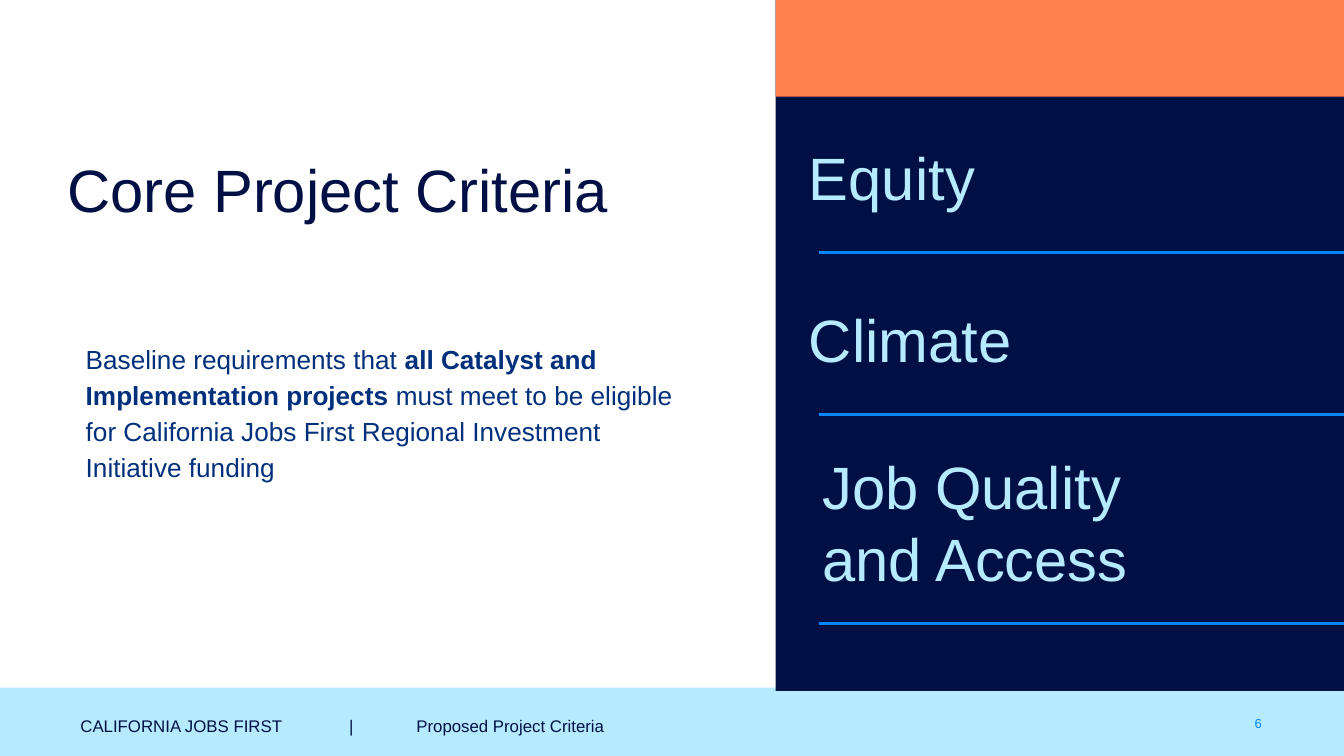
from dataclasses import dataclass

from lxml.etree import SubElement
from pptx import Presentation
from pptx.dml.color import RGBColor
from pptx.enum.shapes import MSO_CONNECTOR as Connector, MSO_SHAPE as Preset
from pptx.enum.text import MSO_ANCHOR as Anchor, MSO_AUTO_SIZE as AutoSize, PP_ALIGN as Align
from pptx.oxml.ns import qn
from pptx.util import Cm, Pt


@dataclass(frozen=True)
class Theme:
    font: str = "Arial"
    navy: str = "001044"
    body_blue: str = "002F7B"
    bright_blue: str = "0086FF"
    pale_blue: str = "B6EAFF"
    orange: str = "FC814C"
    heading: int = 32
    body: int = 14
    footer: int = 9
    number: int = 7
    rule: float = 1.5


THEME = Theme()

# Content; lengths in cm, boxes as left, top, width, height
WIDTH, HEIGHT = 25.4, 14.29
TITLE = "Core Project Criteria"
BODY = [
    ("Baseline requirements that ", False),
    ("all Catalyst and Implementation projects", True),
    (" must meet to be eligible for California Jobs First Regional Investment "
     "Initiative funding", False),
]
FOOTER = "CALIFORNIA JOBS FIRST\t|\tProposed Project Criteria"
FOOTER_TABS = (4.25, 4.69)
PAGE_NUMBER = "6"

# Criterion, top, width, height, insets (sides, ends), line spacing, rule below
CRITERIA = [
    ("Equity", 2.82, 9.5, 1.42, (0, 0), 0.9, 4.78),
    ("Climate", 5.87, 9.5, 1.12, (0, 0), 0.9, 7.83),
    ("Job Quality and Access", 8.38, 7.72, 3.0, (0.25, 0.13), 1.0, 11.79),
]
CRITERIA_LEFT, RULE_LEFT = 15.29, 15.47
PANEL_LEFT, PANEL_BOTTOM, ORANGE_HEIGHT = 14.66, 13.06, 1.83
FOOTER_TOP, FOOTER_TEXT_TOP, FOOTER_TEXT_HEIGHT = 13.0, 13.03, 1.27


def color(name):
    return RGBColor.from_string(name)


def add_block(slide, box, fill):
    shape = slide.shapes.add_shape(Preset.RECTANGLE, *map(Cm, box))
    shape.shadow.inherit = False
    shape.fill.solid()
    shape.fill.fore_color.rgb = color(fill)
    shape.line.fill.background()


def add_rule(slide, top):
    rule = slide.shapes.add_connector(
        Connector.STRAIGHT, Cm(RULE_LEFT), Cm(top), Cm(WIDTH), Cm(top))
    rule.line.color.rgb = color(THEME.bright_blue)
    rule.line.width = Pt(THEME.rule)
    SubElement(rule._element.spPr, qn("a:effectLst"))


def write(shape, box, runs, size, ink, insets=(0, 0), spacing=1.0,
          anchor=Anchor.TOP, align=Align.LEFT, tabs=(), after=0):
    """Place a text shape and fill its one paragraph with (text, bold) runs."""
    shape.left, shape.top, shape.width, shape.height = map(Cm, box)
    frame = shape.text_frame
    frame.word_wrap = True
    frame.auto_size = AutoSize.NONE
    frame.vertical_anchor = anchor
    frame.margin_left = frame.margin_right = Cm(insets[0])
    frame.margin_top = frame.margin_bottom = Cm(insets[1])

    paragraph = frame.paragraphs[0]
    paragraph.alignment = align
    paragraph.line_spacing = spacing
    paragraph.space_before = Pt(0)
    paragraph.space_after = Pt(after)
    properties = paragraph._p.get_or_add_pPr()
    properties.set("marL", "0")
    properties.set("indent", "0")
    SubElement(properties, qn("a:buNone"))
    if tabs:
        tab_list = SubElement(properties, qn("a:tabLst"))
        for position in tabs:
            SubElement(tab_list, qn("a:tab"), pos=str(int(Cm(position))), algn="l")

    for text, bold in runs:
        run = paragraph.add_run()
        run.text = text
        run.font.name = THEME.font
        run.font.size = Pt(size)
        run.font.bold = bold
        run.font.color.rgb = color(ink)


def add_text(slide, box, text, size, ink, **layout):
    shape = slide.shapes.add_textbox(*map(Cm, box))
    write(shape, box, [(text, False)], size, ink, **layout)


def main():
    presentation = Presentation()
    presentation.slide_width, presentation.slide_height = Cm(WIDTH), Cm(HEIGHT)
    slide = presentation.slides.add_slide(presentation.slide_layouts[1])

    # Footer band, text and page number
    add_block(slide, (0, FOOTER_TOP, WIDTH, HEIGHT - FOOTER_TOP), THEME.pale_blue)
    add_text(slide, (1.27, FOOTER_TEXT_TOP, 11.89, FOOTER_TEXT_HEIGHT), FOOTER,
             THEME.footer, THEME.navy, insets=(0.25, 0.25), spacing=1.3,
             anchor=Anchor.MIDDLE, tabs=FOOTER_TABS)
    add_text(slide, (23.06, FOOTER_TEXT_TOP, 1.04, FOOTER_TEXT_HEIGHT), PAGE_NUMBER,
             THEME.number, THEME.bright_blue, insets=(0.25, 0.25),
             anchor=Anchor.MIDDLE, align=Align.RIGHT)

    # Title and explanation
    write(slide.shapes.title, (1.27, 3.05, 11.81, 2.44), [(TITLE, False)],
          THEME.heading, THEME.navy, spacing=0.9)
    write(slide.placeholders[1], (1.37, 6.15, 11.81, 3.63), BODY,
          THEME.body, THEME.body_blue, insets=(0.25, 0.25), spacing=1.15, after=10)

    # Right panel
    panel_width = WIDTH - PANEL_LEFT
    add_block(slide, (PANEL_LEFT, 0, panel_width, PANEL_BOTTOM), THEME.navy)
    add_block(slide, (PANEL_LEFT, 0, panel_width, ORANGE_HEIGHT), THEME.orange)

    # Criteria, each with a rule below
    for text, top, width, height, insets, spacing, rule_top in CRITERIA:
        add_text(slide, (CRITERIA_LEFT, top, width, height), text, THEME.heading,
                 THEME.pale_blue, insets=insets, spacing=spacing)
        add_rule(slide, rule_top)

    presentation.save("out.pptx")


if __name__ == "__main__":
    main()
